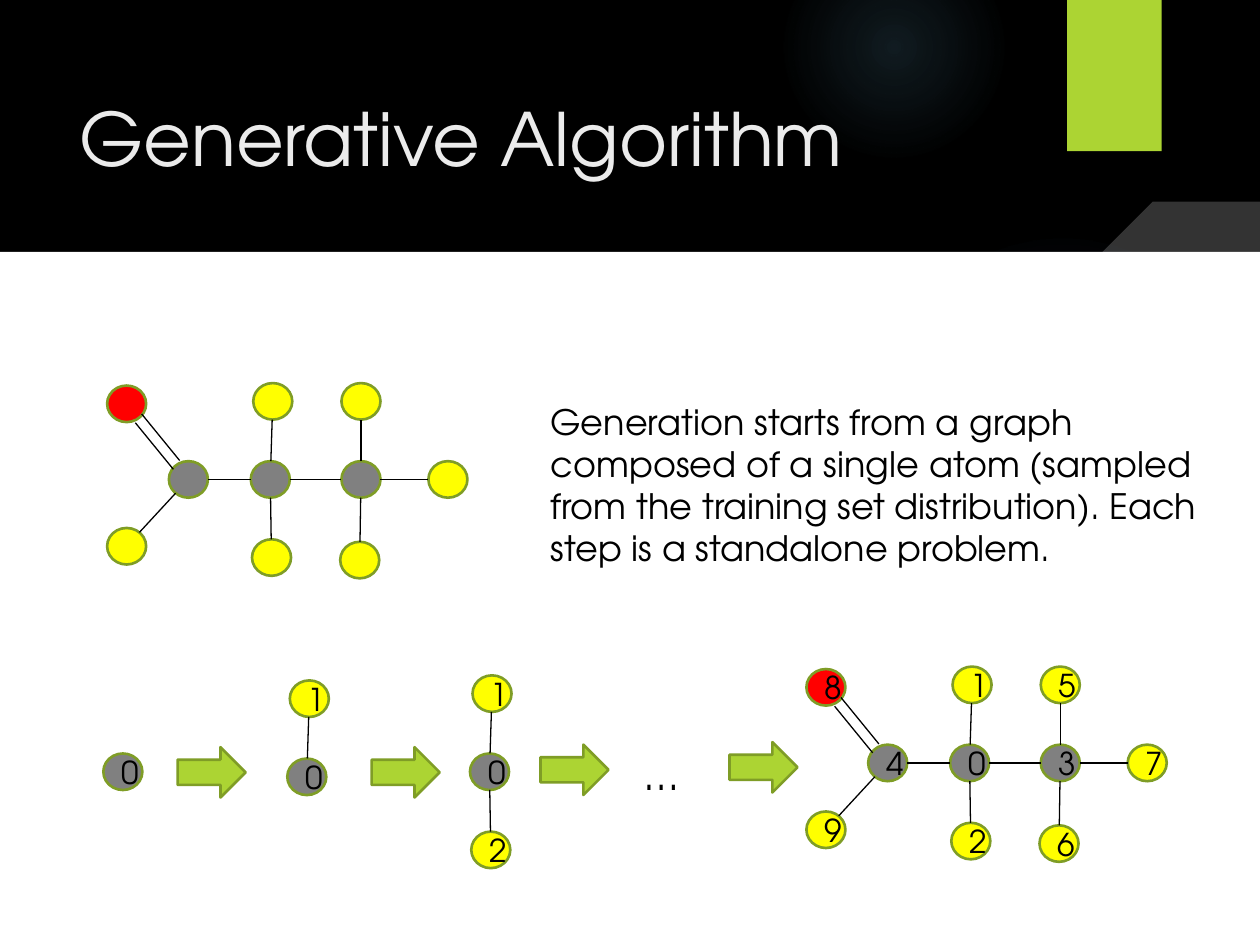
from dataclasses import dataclass
from math import hypot

from lxml.etree import SubElement
from pptx import Presentation
from pptx.dml.color import RGBColor
from pptx.enum.shapes import MSO_CONNECTOR, MSO_SHAPE
from pptx.enum.text import MSO_ANCHOR, PP_ALIGN
from pptx.oxml import parse_xml
from pptx.oxml.ns import nsdecls, qn
from pptx.util import Inches, Pt


@dataclass(frozen=True)
class Theme:
    """Colours, font and sizes of the slide."""
    font: str = "TeX Gyre Adventor"
    title_size: float = 42
    ellipsis_size: float = 24
    body_size: float = 20
    label_size: float = 18
    outline: float = 1.5
    bond: float = 0.75
    black: str = "000000"
    white: str = "FFFFFF"
    title: str = "EBEBEB"
    accent: str = "ACD433"
    accent_dark: str = "7F9D26"
    glow: str = "7AC4F0"
    oxygen: str = "FF0000"
    carbon: str = "808080"
    hydrogen: str = "FFFF00"


THEME = Theme()
ATOM_WIDTH, ATOM_HEIGHT = 0.31, 0.29
ATOMS = [
    (THEME.carbon, 0, 0), (THEME.hydrogen, 0.02, -0.62),
    (THEME.hydrogen, 0.01, 0.62), (THEME.carbon, 0.72, 0),
    (THEME.carbon, -0.65, 0), (THEME.hydrogen, 0.72, -0.62),
    (THEME.hydrogen, 0.71, 0.64), (THEME.hydrogen, 1.41, 0),
    (THEME.oxygen, -1.14, -0.6), (THEME.hydrogen, -1.14, 0.53),
]
SINGLE, DOUBLE = [(0, 0)], [(0.025, -0.035), (-0.025, 0.035)]
BONDS = [
    (0, 1, SINGLE), (0, 2, SINGLE), (0, 3, SINGLE), (0, 4, SINGLE),
    (3, 5, SINGLE), (3, 6, SINGLE), (3, 7, SINGLE), (4, 8, DOUBLE),
    (4, 9, SINGLE),
]
CURVE = [
    (10, 1.93), (9.55, 2.04), (9.09, 2.14), (8.64, 2.23), (8.18, 2.3),
    (7.73, 2.36), (7.28, 2.41), (6.84, 2.45), (6.4, 2.47), (5.97, 2.49),
    (5.54, 2.5), (5.12, 2.5), (4.71, 2.5), (4.32, 2.48), (3.93, 2.47),
    (3.55, 2.44), (3.19, 2.41), (2.84, 2.38), (2.51, 2.35), (2.19, 2.31),
    (1.89, 2.27), (1.61, 2.23), (1.35, 2.19), (1.1, 2.15), (0.88, 2.11),
    (0.69, 2.07), (0.51, 2.04), (0.23, 1.98), (0, 1.93),
]
SWOOSH = [
    (2.85, 0), (2.85, 0.52), (2.76, 0.54), (2, 0.69), (1.2, 0.81),
    (0.5, 0.88), (0.04, 0.9), (0, 0.83), (0.32, 0.77), (0.65, 0.71),
    (1, 0.63), (1.36, 0.54), (1.73, 0.43), (2.1, 0.3), (2.48, 0.16),
    (2.85, 0),
]


def style_shape(shape, fill, outline=None):
    """Give a shape a flat fill and an optional outline."""
    shape.shadow.inherit = False
    shape.fill.solid()
    shape.fill.fore_color.rgb = RGBColor.from_string(fill)
    if outline:
        shape.line.color.rgb = RGBColor.from_string(outline)
        shape.line.width = Pt(THEME.outline)
    else:
        shape.line.fill.background()


def add_preset(slide, preset, left, top, width, height, fill, outline=None):
    """Add a styled preset shape."""
    shape = slide.shapes.add_shape(
        preset, Inches(left), Inches(top), Inches(width), Inches(height))
    style_shape(shape, fill, outline)
    return shape


def add_outline(slide, left, top, points, fill):
    """Add a closed polygon whose points are relative to left and top."""
    builder = slide.shapes.build_freeform(*points[0], scale=Inches(1))
    builder.add_line_segments(points[1:], close=True)
    shape = builder.convert_to_shape(Inches(left), Inches(top))
    style_shape(shape, fill)
    return shape


def set_text(frame, text, size, color, align=PP_ALIGN.LEFT):
    """Write one formatted paragraph."""
    paragraph = frame.paragraphs[0]
    paragraph.text = text
    paragraph.alignment = align
    paragraph.font.name = THEME.font
    paragraph.font.size = Pt(size)
    paragraph.font.color.rgb = RGBColor.from_string(color)


def add_glow(slide, left, top, size, stops):
    """Add a circle that fades out from its centre."""
    glow = add_preset(
        slide, MSO_SHAPE.OVAL, left, top, size, size, THEME.glow)
    stop_xml = "".join(
        f'<a:gs pos="{position * 1000}"><a:srgbClr val="{THEME.glow}">'
        f'<a:alpha val="{alpha * 1000}"/></a:srgbClr></a:gs>'
        for position, alpha in stops)
    solid = glow._element.spPr.find(qn("a:solidFill"))
    solid.getparent().replace(solid, parse_xml(
        f'<a:gradFill {nsdecls("a")}><a:gsLst>{stop_xml}</a:gsLst>'
        '<a:path path="circle"><a:fillToRect l="50000" t="50000" '
        'r="50000" b="50000"/></a:path></a:gradFill>'))


def add_header(slide, left, top, width, height):
    """Draw the dark header, its title and the white page below."""
    background = slide.background.fill
    background.solid()
    background.fore_color.rgb = RGBColor.from_string(THEME.black)
    add_glow(slide, left + 6.89, top + 1.83, 3.08, [(0, 7), (36, 6), (69, 0)])
    add_glow(slide, left + 6.22, top - 0.5, 1.75, [(0, 14), (36, 7), (73, 0)])
    add_preset(slide, MSO_SHAPE.RECTANGLE, left + 8.47, top, 0.75, 1.2,
               THEME.accent)
    swoosh = add_outline(slide, left + 7.15, top + 1.6, SWOOSH, THEME.white)
    color = swoosh._element.spPr.find(qn("a:solidFill"))[0]
    SubElement(color, qn("a:alpha"), val="20000")
    add_preset(slide, MSO_SHAPE.RECTANGLE, left, top + 4.29, width,
               height - 4.29, THEME.white)
    add_outline(slide, left, top, [*CURVE, (0, 4.98), (width, 4.98)],
                THEME.white)

    title = slide.shapes.title
    title.left, title.top = Inches(left + 0.53), Inches(top + 0.69)
    title.width, title.height = Inches(7.59), Inches(1.11)
    title.text_frame.vertical_anchor = MSO_ANCHOR.TOP
    set_text(title.text_frame, "Generative Algorithm", THEME.title_size,
             THEME.title)


def add_bond(slide, left, top, first, second, offsets):
    """Join the rims of two atoms with one line per offset."""
    (_, x1, y1), (_, x2, y2) = ATOMS[first], ATOMS[second]
    dx, dy = x2 - x1, y2 - y1
    rim = 1 / hypot(2 * dx / ATOM_WIDTH, 2 * dy / ATOM_HEIGHT)
    center_x, center_y = left + ATOM_WIDTH / 2, top + ATOM_HEIGHT / 2
    for shift_x, shift_y in offsets:
        ends = [Inches(value) for share in (rim, 1 - rim) for value in (
            center_x + x1 + share * dx + shift_x,
            center_y + y1 + share * dy + shift_y)]
        bond = slide.shapes.add_connector(MSO_CONNECTOR.STRAIGHT, *ends)
        bond.line.color.rgb = RGBColor.from_string(THEME.black)
        bond.line.width = Pt(THEME.bond)
        SubElement(bond._element.spPr, qn("a:effectLst"))


def add_molecule(slide, left, top, atom_count, numbered=True):
    """Draw the first atoms of the molecule, with atom 0 at left and top."""
    for step, (color, x, y) in enumerate(ATOMS[:atom_count]):
        atom = add_preset(slide, MSO_SHAPE.OVAL, left + x, top + y,
                          ATOM_WIDTH, ATOM_HEIGHT, color, THEME.accent_dark)
        if numbered:
            set_text(atom.text_frame, str(step), THEME.label_size,
                     THEME.black, PP_ALIGN.CENTER)
    for first, second, offsets in BONDS:
        if second < atom_count:
            add_bond(slide, left, top, first, second, offsets)


def add_note(slide, left, top, width, height, text, size):
    """Add a wrapped text box."""
    note = slide.shapes.add_textbox(
        Inches(left), Inches(top), Inches(width), Inches(height))
    note.text_frame.word_wrap = True
    set_text(note.text_frame, text, size, THEME.black)


def add_growth(slide, left, top):
    """Show the molecule growing from one atom to its full graph."""
    for x, y, atom_count in [(0, 0.7, 1), (1.46, 0.74, 2), (2.91, 0.7, 3),
                             (6.72, 0.63, len(ATOMS))]:
        add_molecule(slide, left + x, top + y, atom_count)
    for x, y in [(0.59, 0.65), (2.13, 0.65), (3.47, 0.63), (4.97, 0.61)]:
        add_preset(slide, MSO_SHAPE.RIGHT_ARROW, left + x, top + y, 0.54, 0.4,
                   THEME.accent, THEME.accent_dark)
    add_note(slide, left + 4.2, top + 0.61, 0.78, 0.5, "…",
             THEME.ellipsis_size)


def main():
    """Build and save the slide."""
    presentation = Presentation()
    presentation.slide_width, presentation.slide_height = Inches(10), Inches(7.5)
    slide = presentation.slides.add_slide(presentation.slide_layouts[5])
    add_header(slide, 0, 0, 10, 7.5)
    add_molecule(slide, 1.99, 3.66, len(ATOMS), numbered=False)
    add_growth(slide, 0.82, 5.28)
    add_note(slide, 4.27, 3.13, 5.41, 1.45,
             "Generation starts from a graph composed of a single atom "
             "(sampled from the training set distribution). Each step is a "
             "standalone problem.", THEME.body_size)
    presentation.save("out.pptx")


if __name__ == "__main__":
    main()
